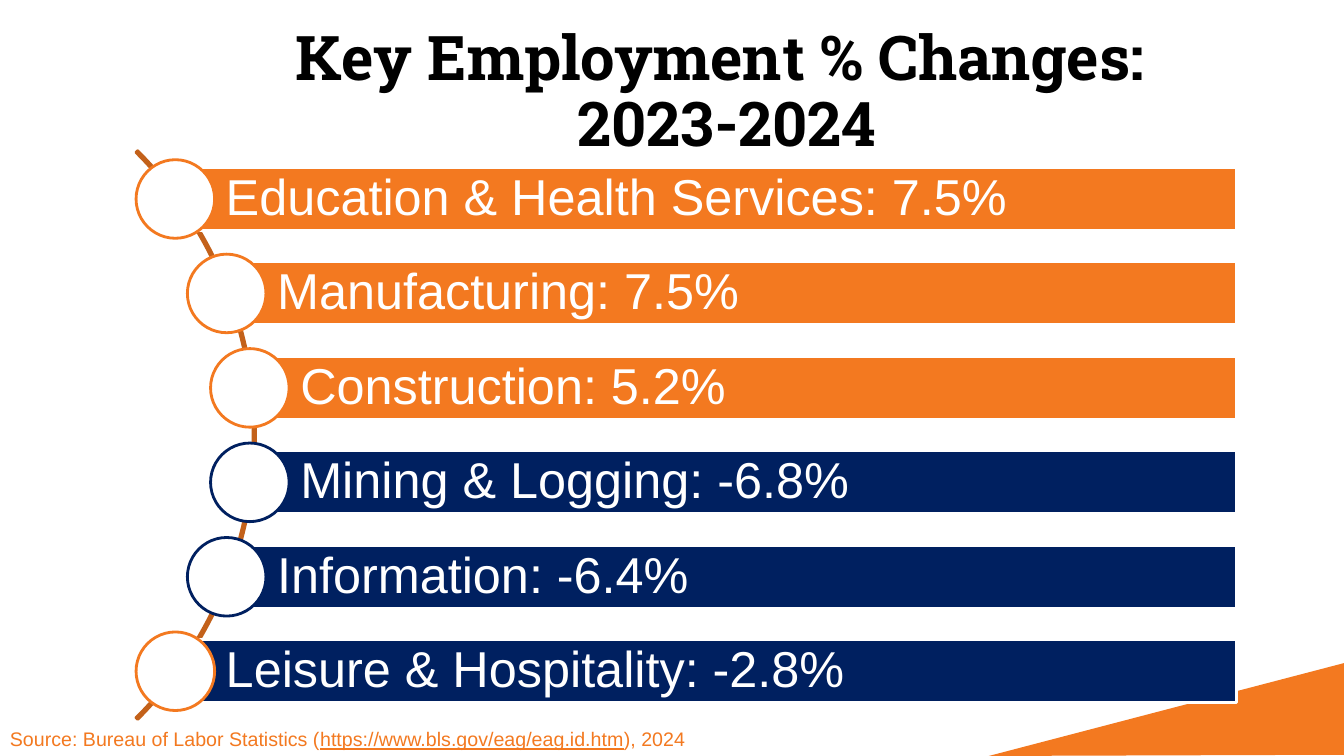
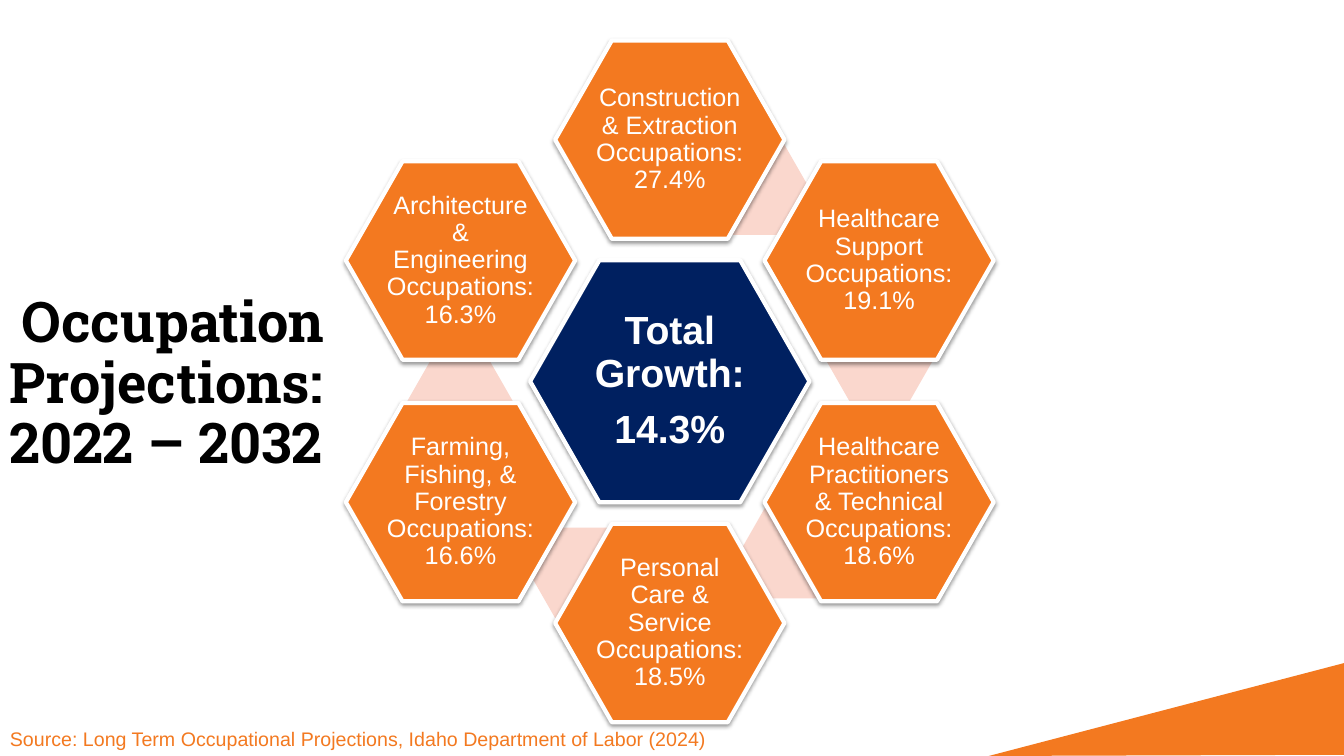
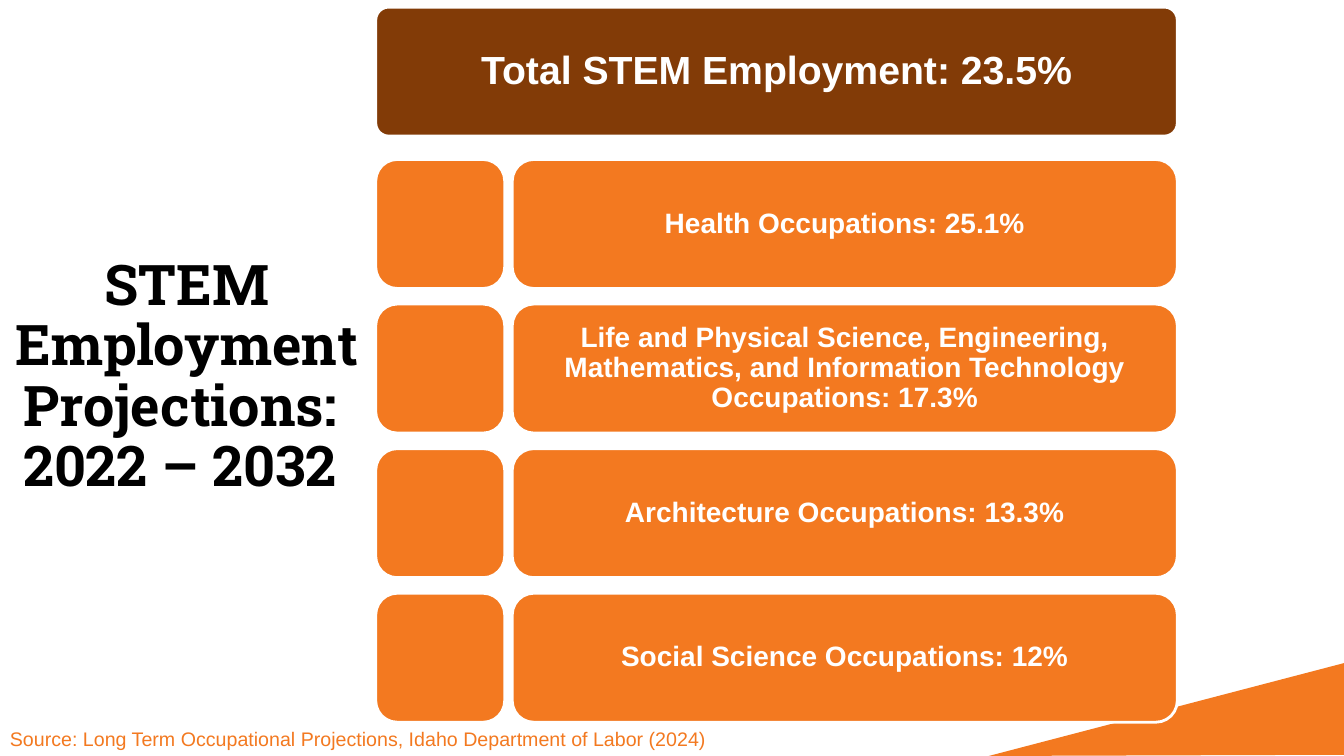
"""Build three slides on employment changes and projections."""
from math import cos, radians, sin, sqrt

from lxml import etree
from pptx import Presentation
from pptx.dml.color import RGBColor
from pptx.enum.shapes import MSO_SHAPE
from pptx.enum.text import MSO_ANCHOR, MSO_AUTO_SIZE, PP_ALIGN
from pptx.oxml.ns import qn
from pptx.util import Cm, Pt

ARC, RECT, OVAL = MSO_SHAPE.BLOCK_ARC, MSO_SHAPE.RECTANGLE, MSO_SHAPE.OVAL
HEX, ROUND = MSO_SHAPE.HEXAGON, MSO_SHAPE.ROUNDED_RECTANGLE
TOP, MIDDLE = MSO_ANCHOR.TOP, MSO_ANCHOR.MIDDLE
LEFT, CENTER = PP_ALIGN.LEFT, PP_ALIGN.CENTER
FIXED = MSO_AUTO_SIZE.NONE

WIDE, HIGH = 33.87, 19.05
HUES = {
    "orange": "F37920", "navy": "002060", "brown": "823B07", "rust": "C3611A",
    "pale": "FAD7CD", "white": "FFFFFF", "black": "000000",
}
FONTS = {
    "title": {"name": "Roboto Slab", "bold": True},
    "bold": {"name": "Arial", "bold": True},
    "plain": {"name": "Arial", "bold": False},
}
FOOT = (0, 18.2, 18.39, 0.86)

RATES = [
    ("Education & Health Services: 7.5%", "orange", "orange"),
    ("Manufacturing: 7.5%", "orange", "orange"),
    ("Construction: 5.2%", "orange", "orange"),
    ("Mining & Logging: -6.8%", "navy", "navy"),
    ("Information: -6.4%", "navy", "navy"),
    ("Leisure & Hospitality: -2.8%", "navy", "orange"),
]
JOBS = [
    "Construction & Extraction Occupations: 27.4%",
    "Healthcare Support Occupations: 19.1%",
    "Healthcare Practitioners & Technical Occupations: 18.6%",
    "Personal Care & Service Occupations: 18.5%",
    "Farming, Fishing, & Forestry Occupations: 16.6%",
    "Architecture & Engineering Occupations: 16.3%",
]
STEM = [
    "Health Occupations: 25.1%",
    "Life and Physical Science, Engineering, Mathematics, "
    "and Information Technology Occupations: 17.3%",
    "Architecture Occupations: 13.3%",
    "Social Science Occupations: 12%",
]
BUREAU = ["Source: Bureau of Labor Statistics (",
          "https://www.bls.gov/eag/eag.id.htm", "), 2024"]
IDAHO = ["Source: Long Term Occupational Projections, "
         "Idaho Department of Labor (2024)"]


def style(item, **values):
    """Set each named attribute on an item."""
    for name, value in values.items():
        setattr(item, name, value)


def rgb(hue):
    """Return the colour of a named hue."""
    return RGBColor.from_string(HUES[hue])


def ink(run, face, size, hue):
    """Format one run."""
    style(run.font, size=Pt(size), **FONTS[face])
    run.font.color.rgb = rgb(hue)


def write(frame, lines, face, size, hue="white", align=CENTER):
    """Fill a frame with one paragraph for each line."""
    for i, line in enumerate(lines):
        para = frame.add_paragraph() if i else frame.paragraphs[0]
        para.text = line
        style(para, alignment=align, line_spacing=0.9,
              space_before=Pt(0.35 * size if i else 0))
        for run in para.runs:
            ink(run, face, size, hue)


def draw(slide, kind, box, fill, edge=None, width=1, pad=0.1):
    """Add a filled shape with flat edges and centred text."""
    shape = slide.shapes.add_shape(kind, *map(Cm, box))
    shape.shadow.inherit = False
    shape.fill.solid()
    shape.fill.fore_color.rgb = rgb(fill)
    if edge:
        shape.line.color.rgb = rgb(edge)
        shape.line.width = Pt(width)
    else:
        shape.line.fill.background()
    style(shape.text_frame, word_wrap=True, vertical_anchor=MIDDLE,
          margin_left=Cm(pad), margin_right=Cm(pad),
          margin_top=Cm(0.1), margin_bottom=Cm(0.1))
    return shape


def shade(shape):
    """Give a shape a soft shadow below it."""
    effects = shape.element.spPr.find(qn("a:effectLst"))
    outer = etree.SubElement(effects, qn("a:outerShdw"), blurRad=str(Pt(3.1)),
                             dist=str(Pt(1.6)), dir="5400000", rotWithShape="0")
    tint = etree.SubElement(outer, qn("a:srgbClr"), val=HUES["black"])
    etree.SubElement(tint, qn("a:alpha"), val="38000")


def wedge(slide, layout):
    """Put the orange corner on the layout."""
    path = slide.shapes.build_freeform(Cm(24.92), Cm(HIGH))
    path.add_line_segments([(Cm(WIDE), Cm(16.71)), (Cm(WIDE), Cm(19.02))])
    shape = path.convert_to_shape()
    shape.shadow.inherit = False
    shape.fill.solid()
    shape.fill.fore_color.rgb = rgb("orange")
    shape.line.fill.background()
    shape.element.nvSpPr.cNvPr.set("id", "90")
    layout.shapes.element.append(shape.element)


def page(deck, layout, title, size, box, source):
    """Add a slide with its title and source line."""
    slide = deck.slides.add_slide(layout)
    head = slide.shapes.title
    style(head, **dict(zip(("left", "top", "width", "height"), map(Cm, box))))
    style(head.text_frame, auto_size=FIXED, word_wrap=True, vertical_anchor=TOP)
    write(head.text_frame, [title], "title", size, "black")
    note = slide.shapes.add_textbox(*map(Cm, FOOT)).text_frame
    note.word_wrap = True
    para = note.paragraphs[0]
    for part in source:
        run = para.add_run()
        run.text = part
        ink(run, "plain", 14, "orange")
        run.font.underline = part.startswith("https")
    return slide


def curve(slide, box):
    """Draw bars whose round heads follow an arc at the left."""
    x, y, w, h = box
    mid_x, mid_y, reach = x - h / 2, y + h / 2, h / sqrt(2)
    arc = draw(slide, ARC, (mid_x - reach, mid_y - reach, 2 * reach, 2 * reach),
               "rust", "rust", 2)
    for i, value in enumerate((189, 27, 0.003)):
        arc.adjustments[i] = value
    step, tall, dot = 2.38, 1.58, 1.98
    for i, (text, fill, ring) in enumerate(RATES):
        rise = (i - (len(RATES) - 1) / 2) * step
        left = mid_x + sqrt((reach - 0.07) ** 2 - rise ** 2)
        row = mid_y + rise
        bar = draw(slide, RECT, (left, row - tall / 2, x + w - left, tall),
                   fill, "white", 2)
        bar.text_frame.margin_left = Cm(1.27)
        write(bar.text_frame, [text], "plain", 36, align=LEFT)
        draw(slide, OVAL, (left - dot / 2, row - dot / 2, dot, dot),
             "white", ring, 2)


def cell(slide, spot, size, fill, edge=None):
    """Draw a hexagon centred on a spot."""
    (x, y), (w, h) = spot, size
    shape = draw(slide, HEX, (x - w / 2, y - h / 2, w, h), fill, edge, 3, 0.04)
    shape.adjustments[0] = 0.286
    return shape


def ring(slide, box):
    """Draw six hexagons around a central one."""
    x, y, w, h = box
    size = (5.78, 5)

    def spot(reach, angle):
        """Return a point at a clockwise angle from the top."""
        turn = radians(angle)
        return x + w / 2 + reach * sin(turn), y + h / 2 - reach * cos(turn)

    core = cell(slide, spot(0, 0), (7.04, 6.1), "navy", "white")
    shade(core)
    write(core.text_frame, ["Total Growth:", "14.3%"], "bold", 28)
    for i, text in enumerate(JOBS):
        if i < len(JOBS) - 1:
            cell(slide, spot(5.31, 60 * i + 24.5), (2.67, 2.29), "pale")
        node = cell(slide, spot((h - size[1]) / 2, 60 * i), size,
                    "orange", "white")
        shade(node)
        write(node.text_frame, [text], "plain", 18)


def stack(slide, box):
    """Draw a header above rows of a square tile and a label."""
    x, y, w, h = box
    side, gap = 3.25, 0.19
    head = draw(slide, ROUND, (x, y, w, side), "brown", "white", 2)
    head.adjustments[0] = 0.1
    write(head.text_frame, ["Total STEM Employment: 23.5%"], "bold", 28)
    first = 3.84
    step = (h - side - first) / (len(STEM) - 1)
    for i, text in enumerate(STEM):
        top = y + first + i * step
        draw(slide, ROUND, (x, top, side, side), "orange", "white", 2)
        left = side + gap
        label = draw(slide, ROUND, (x + left, top, w - left, side),
                     "orange", "white", 2, 0.41)
        write(label.text_frame, [text], "bold", 20)


def main():
    """Build and save the deck."""
    deck = Presentation()
    style(deck, slide_width=Cm(WIDE), slide_height=Cm(HIGH))
    layout = deck.slide_layouts[5]
    rates = page(deck, layout, "Key Employment % Changes: \n2023-2024", 44,
                 (3.73, 0.56, 29.21, 1.9), BUREAU)
    wedge(rates, layout)
    curve(rates, (3.47, 3.8, 27.7, 14.33))
    jobs = page(deck, layout, "Occupation Projections: \n2022 – 2032 ", 40,
                (-0.48, 7.29, 9.68, 4.75), IDAHO)
    ring(jobs, (8.69, 1.02, 16.38, 17.18))
    stem = page(deck, layout, "STEM Employment Projections: \n2022 – 2032 ", 40,
                (0, 6.35, 9.42, 7.26), IDAHO)
    stack(stem, (9.47, 0.18, 20.2, 18.02))
    deck.save("out.pptx")


if __name__ == "__main__":
    main()
